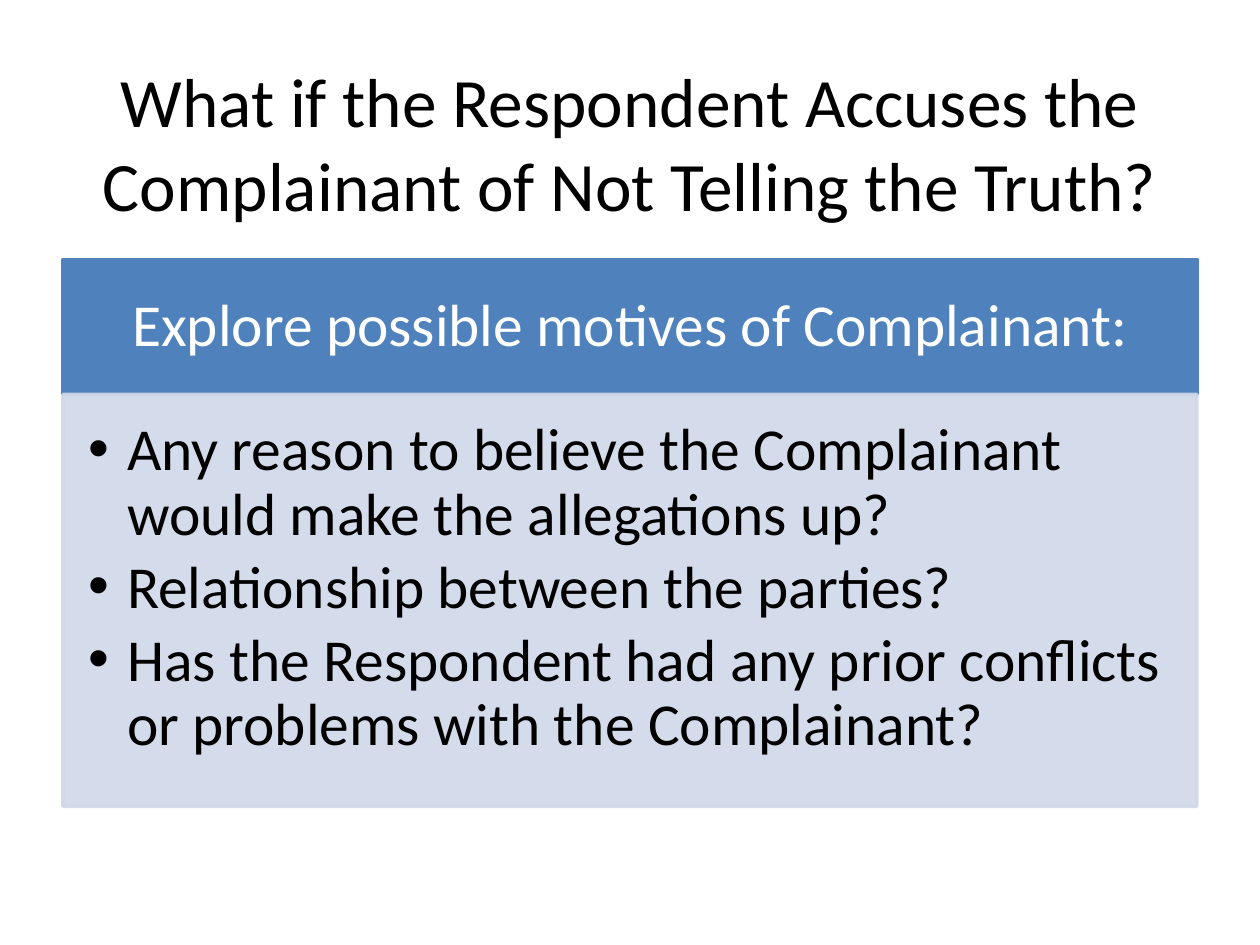
from lxml.etree import SubElement
from pptx import Presentation
from pptx.dml.color import RGBColor
from pptx.enum.shapes import MSO_SHAPE
from pptx.enum.text import MSO_ANCHOR, PP_ALIGN
from pptx.oxml.ns import qn
from pptx.util import Inches, Pt

TITLE = "What if the Respondent Accuses the Complainant of Not Telling the Truth?"
HEAD = "Explore possible motives of Complainant:"
POINTS = [
    "Any reason to believe the Complainant would make the allegations up?",
    "Relationship between the parties?",
    "Has the Respondent had any prior conflicts or problems with the Complainant?",
]

BLACK = RGBColor(0x00, 0x00, 0x00)
WHITE = RGBColor(0xFF, 0xFF, 0xFF)
BLUE = RGBColor(0x4F, 0x81, 0xBD)
PALE = RGBColor(0xD0, 0xD8, 0xE8)

WIDE, HIGH = 10, 7.5
EDGE = WIDE / 20
SPAN = WIDE - 2 * EDGE
TOP, HEAD_H, BODY_H = 2.06, 1.07, 3.27
HANG = 0.31


def fade(shape, share):
    """Make fill and line opaque only to the given percentage."""
    for color in shape._element.spPr.iter(qn("a:srgbClr")):
        SubElement(color, qn("a:alpha"), val=str(share * 1000))


def panel(slide, top, height, color):
    shape = slide.shapes.add_shape(
        MSO_SHAPE.RECTANGLE, Inches(EDGE), Inches(top), Inches(SPAN), Inches(height))
    shape.shadow.inherit = False
    shape.fill.solid()
    shape.fill.fore_color.rgb = color
    shape.line.color.rgb = color
    shape.line.width = Pt(2)
    return shape


def bullet(para):
    props = para._p.get_or_add_pPr()
    props.set("marL", str(Inches(HANG)))
    props.set("indent", str(Inches(-HANG)))
    SubElement(props, qn("a:buFont"), typeface="Arial")
    SubElement(props, qn("a:buChar"), char="•")


def write(shape, lines, size, color, anchor, inset, form, dots=False):
    frame = shape.text_frame
    frame.word_wrap = True
    frame.vertical_anchor = anchor
    for side, gap in zip(("left", "top", "right", "bottom"), inset):
        setattr(frame, "margin_" + side, Inches(gap))
    for i, line in enumerate(lines):
        para = frame.add_paragraph() if i else frame.paragraphs[0]
        for name, value in form.items():
            setattr(para, name, value)
        if dots:
            bullet(para)
        run = para.add_run()
        run.text = line
        look = {"name": "Calibri", "size": Pt(size)}
        for name, value in look.items():
            setattr(run.font, name, value)
        run.font.color.rgb = color


def main():
    deck = Presentation()
    deck.slide_width, deck.slide_height = Inches(WIDE), Inches(HIGH)
    slide = deck.slides.add_slide(deck.slide_layouts[6])

    title = slide.shapes.add_textbox(
        Inches(EDGE), Inches(EDGE), Inches(SPAN), Inches(HIGH / 6))
    write(title, [TITLE], 39.6, BLACK, MSO_ANCHOR.MIDDLE,
          (0.1, 0.05, 0.1, 0.05), {"alignment": PP_ALIGN.CENTER})

    head = panel(slide, TOP, HEAD_H, BLUE)
    write(head, [HEAD], 34, WHITE, MSO_ANCHOR.MIDDLE, (0.26, 0.15, 0.26, 0.15),
          {"alignment": PP_ALIGN.CENTER, "line_spacing": 0.9})

    body = panel(slide, TOP + HEAD_H, BODY_H, PALE)
    fade(body, 90)
    write(body, POINTS, 34, BLACK, MSO_ANCHOR.TOP, (0.2, 0.2, 0.26, 0.3),
          {"alignment": PP_ALIGN.LEFT, "line_spacing": 0.9, "space_after": Pt(5),
           "level": 1}, dots=True)

    deck.save("out.pptx")


if __name__ == "__main__":
    main()
